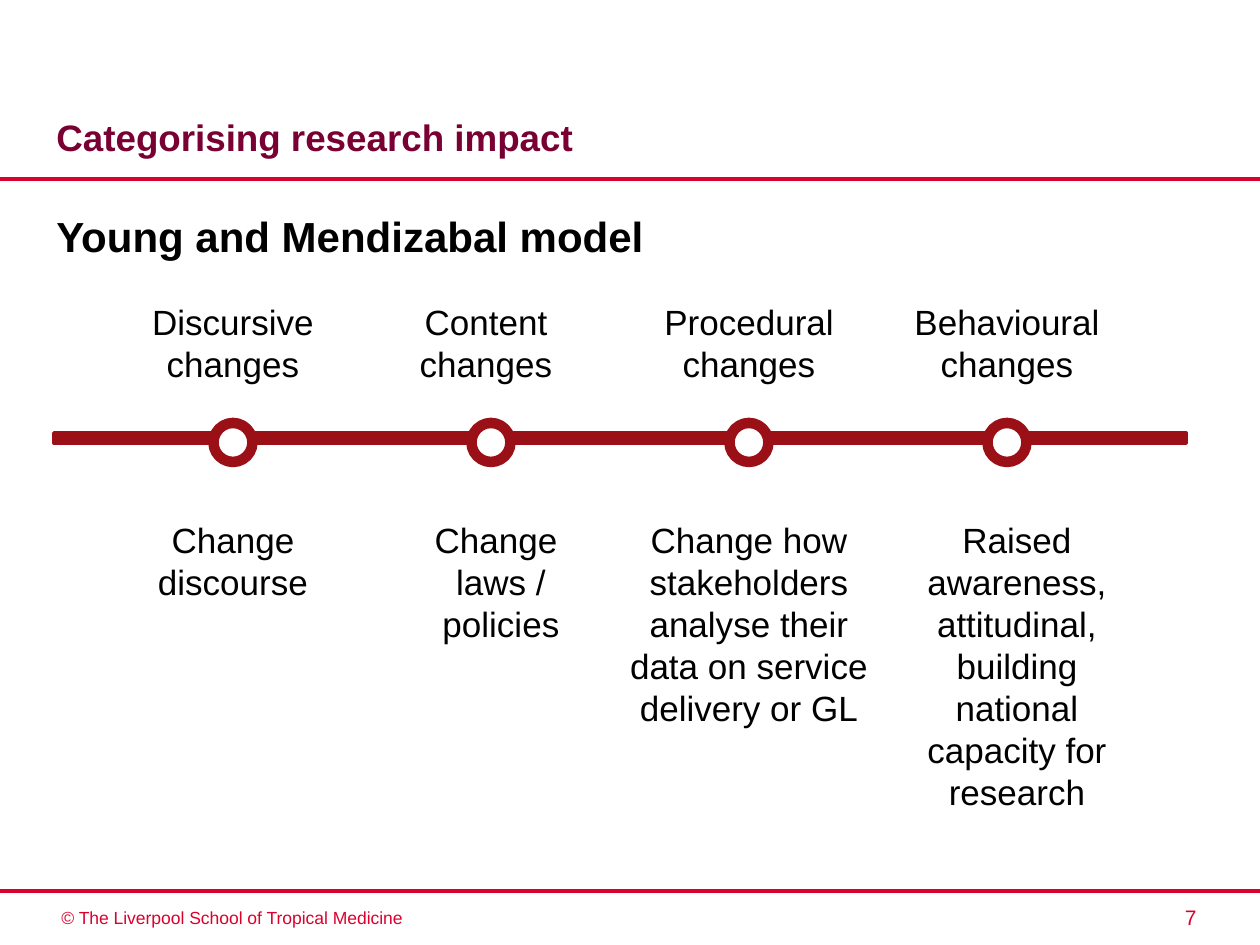
import pptx
import pptx.util
import pptx.dml.color
import pptx.enum.shapes
import pptx.enum.text
import pptx.oxml

# Content: (heading, heading centre, heading width, outcome lines, outcome centre, outcome width)
STAGES = [
    ("Discursive changes", 233, 238, ["Change discourse"], 233, 238),
    ("Content changes", 486, 208, ["Change ", "laws / policies"], 501, 238),
    ("Procedural changes", 749, 218,
     ["Change how stakeholders analyse their data on service delivery or GL"], 749, 277),
    ("Behavioural changes", 1007, 218,
     ["Raised awareness, attitudinal, building national capacity for research"], 1017, 238),
]
TITLE = "Categorising research impact"
SUBTITLE = "Young and Mendizabal model"
FOOTER = "© The Liverpool School of Tropical Medicine"
PAGE_NUMBER = "7"

# Layout in px
SLIDE_WIDTH, SLIDE_HEIGHT = 1260, 945
RULE_TOPS = (179, 891)
FIRST_MARKER, MARKER_PITCH = 233, 258
MARKER_TOP, MARKER_SIZE = 423, 39
HEADING_TOP, OUTCOME_TOP = 294, 512

RED, DARK_RED, PLUM, BLACK, WHITE = "DC002E", "9B0F16", "790033", "000000", "FFFFFF"
ALIGN = pptx.enum.text.PP_ALIGN
ANCHOR = pptx.enum.text.MSO_ANCHOR
SHAPE = pptx.enum.shapes.MSO_SHAPE


def px(length):
    return pptx.util.Emu(round(length * 914400 / 126))


def color(value):
    return pptx.dml.color.RGBColor.from_string(value)


def add_text(slide, lines, left, top, width, height, *, size=20, fill=BLACK,
             bold=False, align=ALIGN.LEFT, anchor=ANCHOR.TOP):
    box = slide.shapes.add_textbox(px(left), px(top), px(width), px(height))
    frame = box.text_frame
    frame.word_wrap = True
    frame.vertical_anchor = anchor
    for index, line in enumerate(lines):
        paragraph = frame.add_paragraph() if index else frame.paragraphs[0]
        paragraph.alignment = align
        run = paragraph.add_run()
        run.text = line
        run.font.name = "Arial"
        run.font.size = pptx.util.Pt(size)
        run.font.bold = bold
        run.font.color.rgb = color(fill)


def add_shape(slide, preset, left, top, width, height, fill, line_width):
    shape = slide.shapes.add_shape(preset, px(left), px(top), px(width), px(height))
    shape.shadow.inherit = False
    shape.fill.solid()
    shape.fill.fore_color.rgb = color(fill)
    shape.line.color.rgb = color(DARK_RED)
    shape.line.width = pptx.util.Pt(line_width)


def add_rule(slide, top):
    rule = slide.shapes.add_connector(
        pptx.enum.shapes.MSO_CONNECTOR.STRAIGHT, 0, px(top), px(SLIDE_WIDTH), px(top))
    rule.line.color.rgb = color(RED)
    rule.line.width = pptx.util.Pt(2.25)
    properties = rule._element.spPr
    properties.append(properties.makeelement(pptx.oxml.ns.qn("a:effectLst"), {}))


def main():
    presentation = pptx.Presentation()
    presentation.slide_width = px(SLIDE_WIDTH)
    presentation.slide_height = px(SLIDE_HEIGHT)
    slide = presentation.slides.add_slide(presentation.slide_layouts[6])

    # Footer and rules
    add_text(slide, [PAGE_NUMBER], 978, 898, 231, 38, size=12, fill=RED, align=ALIGN.RIGHT)
    add_text(slide, [FOOTER], 49, 901, 498, 34, size=10, fill=RED)
    for top in RULE_TOPS:
        add_rule(slide, top)

    # Title and subtitle
    add_text(slide, [TITLE], 44, 38, 1153, 127, size=21, fill=PLUM, bold=True,
             anchor=ANCHOR.BOTTOM)
    add_text(slide, [SUBTITLE], 44, 204, 833, 63, size=24, bold=True)

    # Timeline bar, markers and their texts
    add_shape(slide, SHAPE.RECTANGLE, 54, 433, 1132, 10, DARK_RED, 2)
    for index, stage in enumerate(STAGES):
        heading, heading_center, heading_width, outcome, outcome_center, outcome_width = stage
        marker_left = FIRST_MARKER + index * MARKER_PITCH - MARKER_SIZE / 2
        add_shape(slide, SHAPE.FLOWCHART_CONNECTOR, marker_left, MARKER_TOP,
                  MARKER_SIZE, MARKER_SIZE, WHITE, 6)
        add_text(slide, [heading], heading_center - heading_width / 2, HEADING_TOP,
                 heading_width, 97, align=ALIGN.CENTER)
        add_text(slide, outcome, outcome_center - outcome_width / 2, OUTCOME_TOP,
                 outcome_width, 310, align=ALIGN.CENTER)

    presentation.save("out.pptx")


if __name__ == "__main__":
    main()
